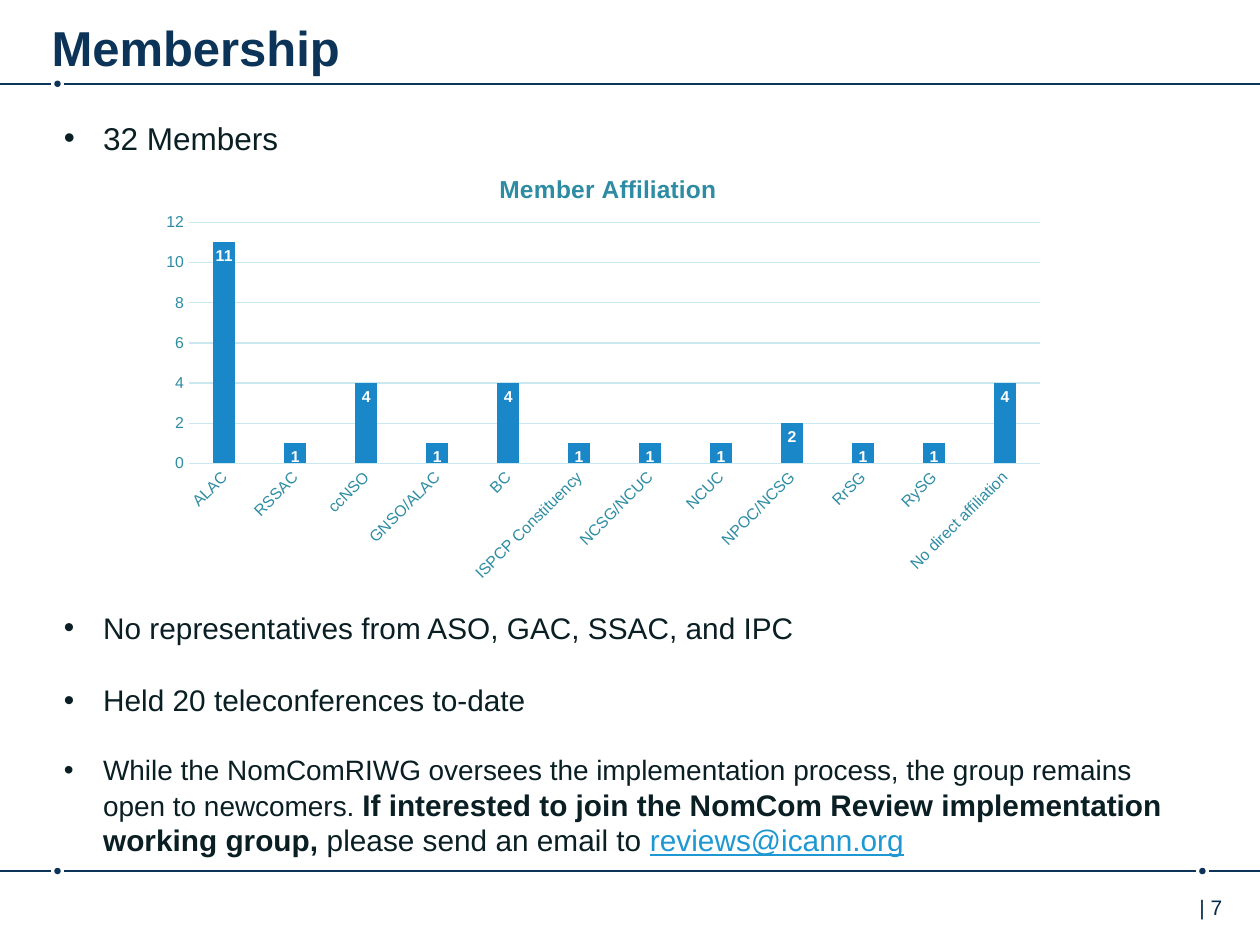
import pptx
import pptx.chart.data
import pptx.dml.color
import pptx.enum.chart
import pptx.enum.shapes
import pptx.oxml.ns
import pptx.util
from dataclasses import dataclass
from lxml import etree

Cm, Pt = pptx.util.Cm, pptx.util.Pt
qn = pptx.oxml.ns.qn
FONT = "Arial"
WIDE, HIGH = 25.4, 19.05
HUES = {
    "navy": "0C3458", "page": "002B49", "ink": "0A1F24", "teal": "2D8CA3",
    "grid": "C9E8F0", "bar": "1A87C9", "link": "1D98D3", "white": "FFFFFF",
}


@dataclass
class Run:
    text: str
    size: float
    hue: str = "ink"
    bold: bool = False
    under: bool = False


@dataclass
class Para:
    runs: list[Run]
    gap: float = 0
    mark: bool = True


@dataclass
class Rule:
    y: float
    dots: list[float]


def tint(name: str) -> pptx.dml.color.RGBColor:
    return pptx.dml.color.RGBColor.from_string(HUES[name])


def style(font, size: float, hue: str, bold: bool = False) -> None:
    font.name, font.size, font.bold = FONT, Pt(size), bold
    font.color.rgb = tint(hue)


def add_line(slide, left: float, right: float, y: float) -> None:
    line = slide.shapes.add_connector(
        pptx.enum.shapes.MSO_CONNECTOR.STRAIGHT, Cm(left), Cm(y), Cm(right), Cm(y))
    line.line.color.rgb = tint("navy")
    line.line.width = Pt(1)
    etree.SubElement(line._element.spPr, qn("a:effectLst"))


def add_rule(slide, rule: Rule) -> None:
    """A line across the slide, broken around each dot."""
    size, clear = 0.13, 0.13
    start = 0
    for x in rule.dots:
        dot = slide.shapes.add_shape(
            pptx.enum.shapes.MSO_SHAPE.OVAL,
            Cm(x - size / 2), Cm(rule.y - size / 2), Cm(size), Cm(size))
        dot.shadow.inherit = False
        dot.fill.solid()
        dot.fill.fore_color.rgb = tint("navy")
        dot.line.fill.background()
        add_line(slide, start, x - clear, rule.y)
        start = x + clear
    add_line(slide, start, WIDE, rule.y)


def add_text(slide, box: tuple, paras: list[Para], pad: tuple = (0.25, 0.13)) -> None:
    frame = slide.shapes.add_textbox(*map(Cm, box)).text_frame
    frame.word_wrap = True
    frame.margin_left = frame.margin_right = Cm(pad[0])
    frame.margin_top, frame.margin_bottom = Cm(pad[1]), Cm(0.13)
    for i, item in enumerate(paras):
        para = frame.add_paragraph() if i else frame.paragraphs[0]
        if item.mark:
            props = para._p.get_or_add_pPr()
            props.set("marL", str(Cm(0.79)))
            props.set("indent", str(-Cm(0.79)))
            etree.SubElement(props, qn("a:buFont"), typeface=FONT)
            etree.SubElement(props, qn("a:buChar"), char="•")
        if item.gap:
            para.space_before = Pt(item.gap)
        for part in item.runs:
            run = para.add_run()
            run.text = part.text
            style(run.font, part.size, part.hue, part.bold)
            if part.under:
                run.font.underline = True


def lay_out(host, spot: int, **sides: float) -> None:
    """Put a chart part at a set place, in shares of the chart."""
    for old in host.findall(qn("c:layout")):
        host.remove(old)
    lay = etree.Element(qn("c:layout"))
    hand = etree.SubElement(lay, qn("c:manualLayout"))
    if "w" in sides:
        etree.SubElement(hand, qn("c:layoutTarget"), val="inner")
    for key in "xy":
        etree.SubElement(hand, qn(f"c:{key}Mode"), val="edge")
    for key, value in sides.items():
        etree.SubElement(hand, qn(f"c:{key}"), val=str(value))
    host.insert(spot, lay)


def add_bars(slide, box: tuple, title: str, counts: dict[str, int]) -> None:
    kinds = pptx.enum.chart
    data = pptx.chart.data.CategoryChartData()
    data.categories = list(counts)
    data.add_series("Series 1", list(counts.values()))
    chart = slide.shapes.add_chart(
        kinds.XL_CHART_TYPE.COLUMN_CLUSTERED, *map(Cm, box), data).chart
    style(chart.font, 10, "ink")
    chart.has_legend = False

    # Title
    chart.has_title = True
    run = chart.chart_title.text_frame.paragraphs[0].add_run()
    run.text = title
    style(run.font, 14, "teal", True)
    lay_out(chart.chart_title._element, 1, x=0.38, y=0.05)
    area = chart._chartSpace.chart.plotArea
    lay_out(area, 0, x=0.044, y=0.171, w=0.935, h=0.542)

    # Axes
    names, scale = chart.category_axis, chart.value_axis
    for axis in (names, scale):
        axis.major_tick_mark = axis.minor_tick_mark = kinds.XL_TICK_MARK.NONE
        style(axis.tick_labels.font, 9, "teal")
    turn = names._element.find(qn("c:txPr")).find(qn("a:bodyPr"))
    turn.set("rot", "-2700000")
    turn.set("vert", "horz")
    scale.minimum_scale, scale.maximum_scale, scale.major_unit = 0, 12, 2
    scale.has_major_gridlines = True
    for line in (names.format.line, scale.major_gridlines.format.line):
        line.color.rgb = tint("grid")
        line.width = Pt(0.75)
    scale.format.line.fill.background()

    # Bars and their labels
    plot = chart.plots[0]
    plot.gap_width, plot.overlap = 219, -27
    plot.vary_by_categories = False
    bars = plot.series[0]
    bars.format.fill.solid()
    bars.format.fill.fore_color.rgb = tint("bar")
    tags = bars.data_labels
    tags.show_value = True
    tags.position = kinds.XL_LABEL_POSITION.INSIDE_END
    style(tags.font, 9, "white", True)


COUNTS = {
    "ALAC": 11, "RSSAC": 1, "ccNSO": 4, "GNSO/ALAC": 1, "BC": 4,
    "ISPCP Constituency": 1, "NCSG/NCUC": 1, "NCUC": 1, "NPOC/NCSG": 2,
    "RrSG": 1, "RySG": 1, "No direct affiliation": 4,
}
RULES = [Rule(1.69, [1.16]), Rule(17.56, [1.16, 24.24])]
# The wide gap leaves room for the chart
POINTS = [
    Para([Run("32 Members", 18)]),
    Para([Run("No representatives from ASO, GAC, SSAC, and IPC", 17)], 259),
    Para([Run("Held 20 teleconferences to-date", 17)], 21),
    Para([
        Run("While the NomComRIWG oversees the implementation process, "
            "the group remains open to newcomers. ", 16),
        Run("If interested to join the NomCom Review implementation "
            "working group,", 17, bold=True),
        Run(" please send an email to ", 17),
        Run("reviews@icann.org", 17, "link", under=True),
    ], 20),
]


def main() -> None:
    deck = pptx.Presentation()
    deck.slide_width, deck.slide_height = Cm(WIDE), Cm(HIGH)
    slide = deck.slides.add_slide(deck.slide_layouts[6])

    # Frame lines and page number
    for rule in RULES:
        add_rule(slide, rule)
    add_text(slide, (23.93, 17.91, 1.47, 1.02),
             [Para([Run("| 7", 12, "page")], mark=False)])

    # Chart, heading and points
    add_bars(slide, (3, 2.95, 18.36, 8.97), "Member Affiliation", COUNTS)
    add_text(slide, (1.04, 0.13, 22.25, 1.24),
             [Para([Run("Membership", 28, "navy", True)], mark=False)], (0, 0.23))
    add_text(slide, (1.04, 2.26, 22.73, 15.27), POINTS)
    deck.save("out.pptx")


if __name__ == "__main__":
    main()
